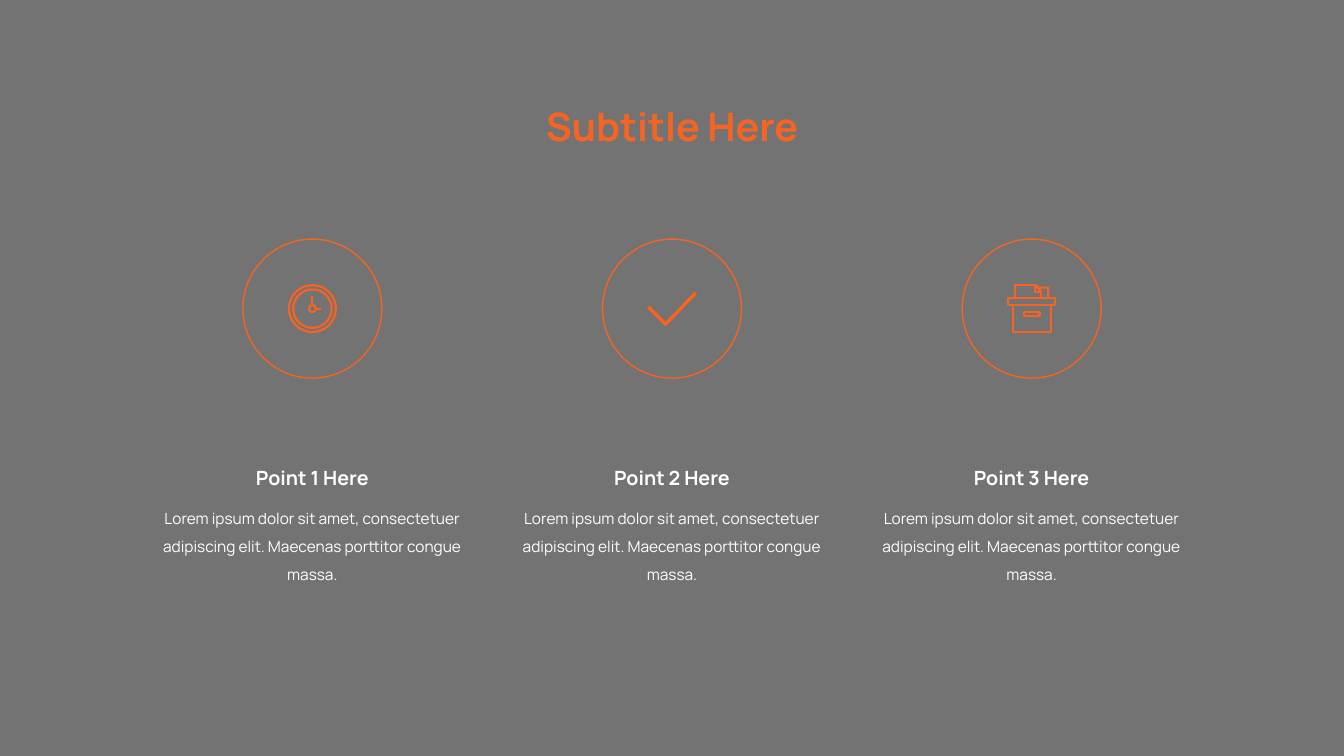
import math
from dataclasses import dataclass

from lxml import etree
from pptx import Presentation
from pptx import util as u
from pptx.dml.color import RGBColor
from pptx.enum import shapes, text
from pptx.oxml import ns


@dataclass(frozen=True)
class Theme:
    font: str = "Manrope"
    accent: str = "F56423"
    light: str = "FFFFFF"
    backdrop: str = "505050"
    backdrop_alpha: int = 80
    subtitle: int = 28
    heading: int = 14
    body: int = 11
    ring: float = 1
    icon: float = 1.6
    tick: float = 2.5
    leading: float = 1.5


class Canvas:
    COLUMNS, ROWS = 112, 63

    def __init__(self, deck, theme):
        self.theme = theme
        self.column = deck.slide_width / self.COLUMNS
        self.row = deck.slide_height / self.ROWS
        self.page = deck.slides.add_slide(deck.slide_layouts[6])

    def point(self, x, y):
        return round(x * self.column), round(y * self.row)

    def outline(self, shape, width):
        shape.shadow.inherit = False
        shape.fill.background()
        shape.line.color.rgb = RGBColor.from_string(self.theme.accent)
        shape.line.width = u.Pt(width)

    def backdrop(self, rows):
        size = self.point(self.COLUMNS, rows)
        panel = self.page.shapes.add_shape(shapes.MSO_SHAPE.RECTANGLE, 0, 0, *size)
        panel.shadow.inherit = False
        panel.line.fill.background()
        panel.fill.solid()
        panel.fill.fore_color.rgb = RGBColor.from_string(self.theme.backdrop)
        color = panel._element.spPr.find(".//" + ns.qn("a:srgbClr"))
        alpha = etree.SubElement(color, ns.qn("a:alpha"))
        alpha.set("val", str(self.theme.backdrop_alpha * 1000))

    def ring(self, x, y, radius):
        circle = self.page.shapes.add_shape(
            shapes.MSO_SHAPE.OVAL, *self.point(x - radius, y - radius),
            *self.point(2 * radius, 2 * radius))
        self.outline(circle, self.theme.ring)

    def icon(self, x, y, strokes, weight):
        placed = [[self.point(x + dx, y + dy) for dx, dy in stroke]
                  for stroke in strokes]
        builder = self.page.shapes.build_freeform(*placed[0][0])
        for index, (start, *rest) in enumerate(placed):
            if index:
                builder.move_to(*start)
            builder.add_line_segments(rest, close=start == rest[-1])
        self.outline(builder.convert_to_shape(), weight)

    def label(self, words, center, top, width, height, size, color,
              bold=False, leading=None, anchor=text.MSO_ANCHOR.TOP):
        box = self.page.shapes.add_textbox(
            *self.point(center - width / 2, top), *self.point(width, height))
        frame = box.text_frame
        frame.word_wrap = True
        frame.auto_size = text.MSO_AUTO_SIZE.SHAPE_TO_FIT_TEXT
        frame.vertical_anchor = anchor
        para = frame.paragraphs[0]
        para.alignment = text.PP_ALIGN.CENTER
        para.line_spacing = leading
        span = para.add_run()
        span.text = words
        span.font.name = self.theme.font
        span.font.size = u.Pt(size)
        span.font.bold = bold
        span.font.color.rgb = RGBColor.from_string(color)


def circle(radius, steps=48):
    angles = [2 * math.pi * step / steps for step in range(steps)]
    points = [(radius * math.cos(a), radius * math.sin(a)) for a in angles]
    return points + points[:1]


def rectangle(left, top, right, bottom):
    return [(left, top), (right, top), (right, bottom), (left, bottom),
            (left, top)]


def clock():
    return [circle(1.95), circle(1.6), circle(0.28),
            [(0, -1.05), (0, -0.28)], [(0.28, 0), (0.68, 0)]]


def tick():
    return [[(-1.97, -0.13), (-0.55, 1.3), (1.97, -1.3)]]


def archive():
    front_sheet = [(-1.39, -0.9), (-1.39, -1.95), (0.3, -1.95),
                   (0.3, -1.4), (0.8, -1.4), (0.8, -0.9)]
    back_sheet = [(0.8, -1.4), (0.3, -1.95), (0.6, -1.75),
                  (1.39, -1.75), (1.39, -0.9)]
    return [front_sheet, back_sheet,
            rectangle(-1.97, -0.88, 1.97, -0.3),
            rectangle(-1.58, -0.3, 1.58, 1.97),
            rectangle(-0.65, 0.25, 0.65, 0.62)]


def main():
    deck = Presentation()
    deck.slide_width, deck.slide_height = u.Inches(13.33), u.Inches(7.5)
    theme = Theme()
    canvas = Canvas(deck, theme)
    canvas.backdrop(rows=64.4)
    middle, pitch, icon_row = canvas.COLUMNS / 2, 29.97, 25.72
    body = ("Lorem ipsum dolor sit amet, consectetuer adipiscing elit. "
            "Maecenas porttitor congue massa.")
    icons = ((clock(), theme.icon), (tick(), theme.tick),
             (archive(), theme.icon))
    for index, (strokes, weight) in enumerate(icons):
        center = middle + (index - 1) * pitch
        canvas.icon(center, icon_row, strokes, weight)
        canvas.ring(center, icon_row, 5.79)
        canvas.label(body, center, 41.25, 27, 7.55, theme.body, theme.light,
                     leading=theme.leading)
        canvas.label(f"Point {index + 1} Here", center, 37.45, 27, 3.45,
                     theme.heading, theme.light, bold=True,
                     leading=theme.leading)
    canvas.label("Subtitle Here", middle, 8.05, 34, 4.8, theme.subtitle,
                 theme.accent, bold=True, anchor=text.MSO_ANCHOR.BOTTOM)
    deck.save("out.pptx")


if __name__ == "__main__":
    main()
